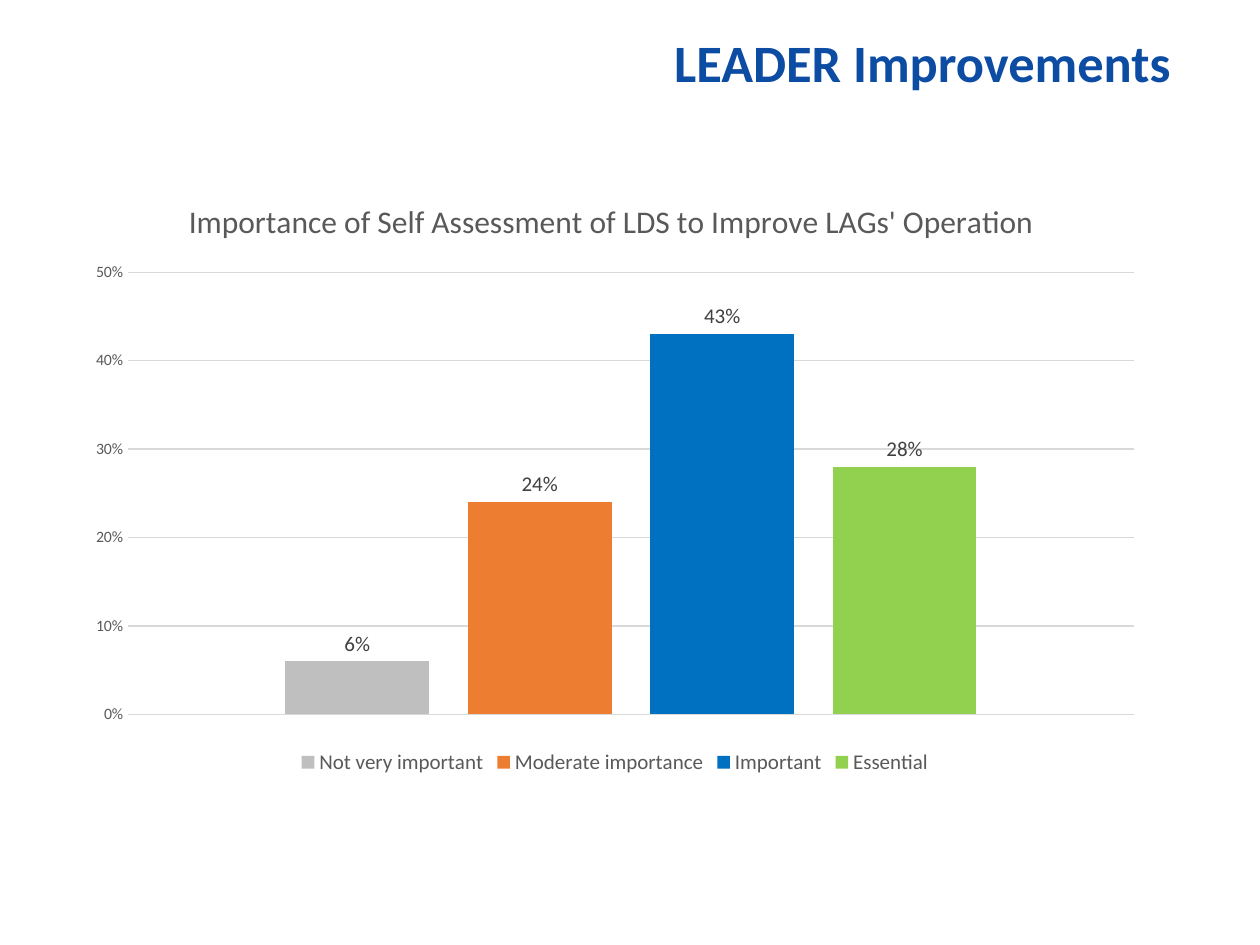
from pptx import Presentation
from pptx.chart.data import CategoryChartData
from pptx.dml.color import RGBColor
from pptx.enum import chart as charts, text
from pptx.util import Cm, Pt

FONT = "Calibri"
NAVY = RGBColor(0x0C, 0x4C, 0xA3)
GREY = RGBColor(0x59, 0x59, 0x59)
DARK_GREY = RGBColor(0x40, 0x40, 0x40)
GRID_GREY = RGBColor(0xD9, 0xD9, 0xD9)
PERCENT = "0%"

# Answer, share, bar colour
ANSWERS = [
    ("Not very important", 0.06, RGBColor(0xBF, 0xBF, 0xBF)),
    ("Moderate importance", 0.24, RGBColor(0xED, 0x7D, 0x31)),
    ("Important", 0.43, RGBColor(0x00, 0x70, 0xC0)),
    ("Essential", 0.28, RGBColor(0x92, 0xD0, 0x50)),
]


def style_font(font, size, color, bold=False):
    font.name = FONT
    font.size = Pt(size)
    font.bold = bold
    font.color.rgb = color


def write_text(frame, words, *, size, color, bold=False, align=None, spacing=None):
    paragraph = frame.paragraphs[0]
    paragraph.alignment = align
    paragraph.line_spacing = spacing
    run = paragraph.add_run()
    run.text = words
    style_font(run.font, size, color, bold)


def place_heading(slide, left, top, width, height):
    heading = slide.shapes.title
    heading.left, heading.top = left, top
    heading.width, heading.height = width, height
    frame = heading.text_frame
    frame.word_wrap = True
    frame.vertical_anchor = text.MSO_ANCHOR.MIDDLE
    write_text(frame, "LEADER Improvements", size=30, color=NAVY, bold=True,
               align=text.PP_ALIGN.RIGHT, spacing=0.9)


def format_axes(chart):
    chart.category_axis.visible = False
    shares = chart.value_axis
    shares.minimum_scale, shares.maximum_scale = 0, 0.5
    shares.major_unit = 0.1
    shares.major_tick_mark = shares.minor_tick_mark = charts.XL_TICK_MARK.NONE
    shares.format.line.fill.background()
    shares.tick_labels.number_format = PERCENT
    shares.tick_labels.number_format_is_linked = False
    style_font(shares.tick_labels.font, 9, GREY)
    grid = shares.major_gridlines.format.line
    grid.width = Pt(0.75)
    grid.color.rgb = GRID_GREY


def format_bars(plot):
    plot.gap_width = 219
    plot.overlap = -27
    plot.vary_by_categories = False
    for bar, (_, _, color) in zip(plot.series, ANSWERS):
        bar.invert_if_negative = False
        bar.format.fill.solid()
        bar.format.fill.fore_color.rgb = color
        labels = bar.data_labels
        labels.show_value = True
        labels.position = charts.XL_LABEL_POSITION.OUTSIDE_END
        labels.number_format = PERCENT
        labels.number_format_is_linked = False
        style_font(labels.font, 12, DARK_GREY)


def place_importance_chart(slide, left, top, width, height):
    data = CategoryChartData(number_format=PERCENT)
    data.categories = ["1"]
    for answer, share, _ in ANSWERS:
        data.add_series(answer, [share])
    chart = slide.shapes.add_chart(charts.XL_CHART_TYPE.COLUMN_CLUSTERED,
                                   left, top, width, height, data).chart
    chart.font.name = FONT
    chart.font.size = Pt(10)

    # Chart title
    chart.has_title = True
    chart.chart_title.include_in_layout = False
    write_text(chart.chart_title.text_frame,
               "Importance of Self Assessment of LDS to Improve LAGs' Operation ",
               size=18, color=GREY)

    format_axes(chart)
    format_bars(chart.plots[0])

    # Legend
    chart.has_legend = True
    chart.legend.position = charts.XL_LEGEND_POSITION.BOTTOM
    chart.legend.include_in_layout = False
    style_font(chart.legend.font, 12, GREY)


def main():
    deck = Presentation()
    deck.slide_width, deck.slide_height = Cm(25.4), Cm(19.05)
    slide = deck.slides.add_slide(deck.slide_layouts[5])
    place_heading(slide, Cm(5.11), Cm(0.53), Cm(18.75), Cm(1.6))
    place_importance_chart(slide, Cm(1.5), Cm(3.53), Cm(21.79), Cm(12.19))
    deck.save("out.pptx")


if __name__ == "__main__":
    main()
